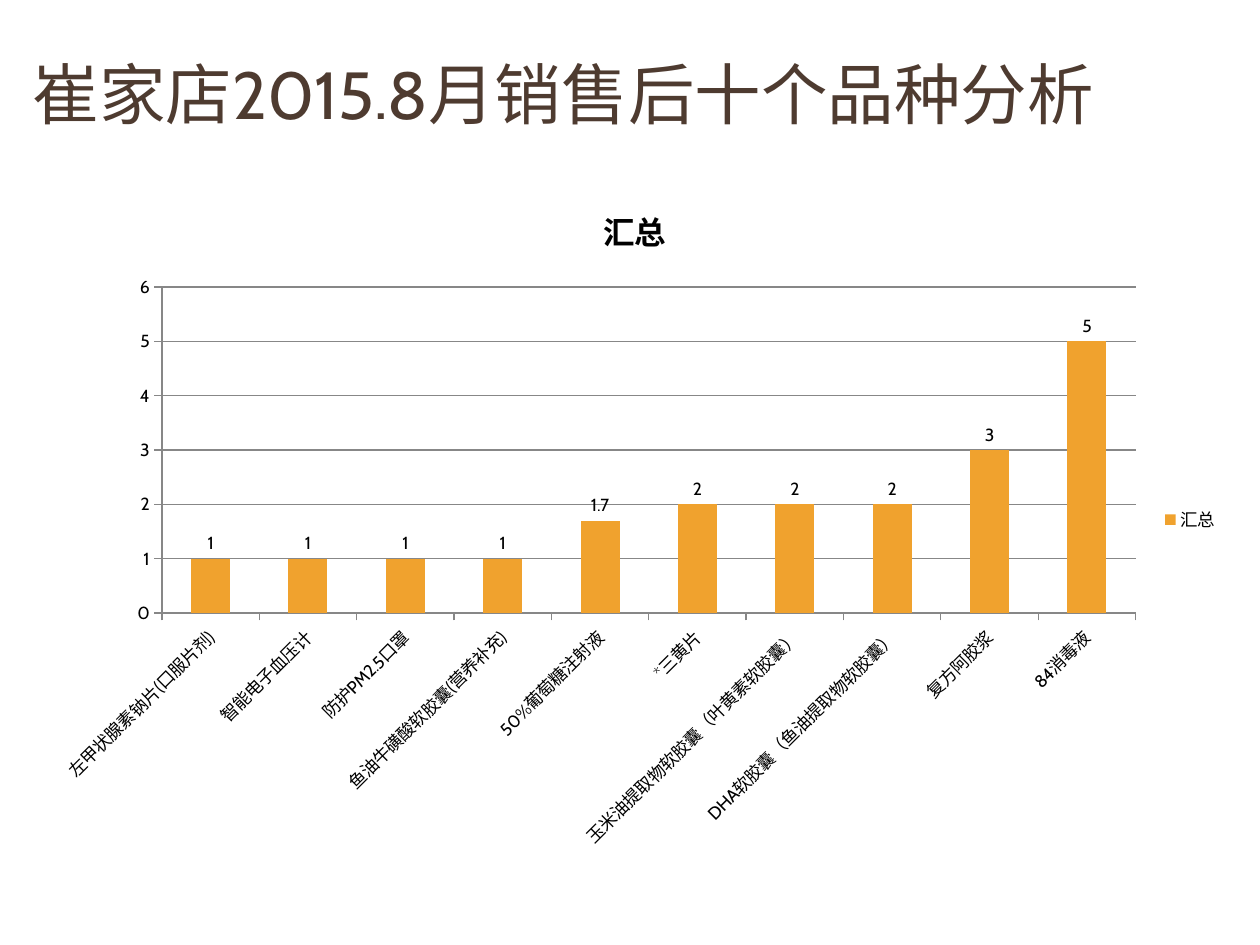
from pptx import Presentation
from pptx.chart.data import CategoryChartData
from pptx.dml.color import RGBColor
from pptx.enum.chart import XL_CHART_TYPE, XL_LABEL_POSITION, XL_LEGEND_POSITION, XL_TICK_MARK
from pptx.enum.text import MSO_ANCHOR
from pptx.util import Inches, Pt

COLUMNS = XL_CHART_TYPE.COLUMN_CLUSTERED
OUTSIDE_END = XL_LABEL_POSITION.OUTSIDE_END
LEGEND_RIGHT = XL_LEGEND_POSITION.RIGHT
TICK_OUTSIDE = XL_TICK_MARK.OUTSIDE
MIDDLE = MSO_ANCHOR.MIDDLE
FONT = "Cabin"
GREY = "878787"

SALES = {
    "左甲状腺素钠片(口服片剂)": 1,
    "智能电子血压计": 1,
    "防护PM2.5口罩": 1,
    "鱼油牛磺酸软胶囊(营养补充)": 1,
    "50%葡萄糖注射液": 1.7,
    "*三黄片": 2,
    "玉米油提取物软胶囊（叶黄素软胶囊）": 2,
    "DHA软胶囊（鱼油提取物软胶囊）": 2,
    "复方阿胶浆": 3,
    "84消毒液": 5,
}


def color(hex_string):
    return RGBColor.from_string(hex_string)


def style_font(font, size, hex_string, bold=False):
    font.name = FONT
    font.size = Pt(size)
    font.bold = bold
    font.color.rgb = color(hex_string)


presentation = Presentation()
presentation.slide_width = Inches(10)
presentation.slide_height = Inches(7.5)
slide = presentation.slides.add_slide(presentation.slide_layouts[6])

# Heading
heading = slide.shapes.add_textbox(Inches(0.16), Inches(0.31), Inches(9.61), Inches(0.86))
heading_frame = heading.text_frame
heading_frame.word_wrap = True
heading_frame.vertical_anchor = MIDDLE
paragraph = heading_frame.paragraphs[0]
paragraph.text = "崔家店2015.8月销售后十个品种分析"
style_font(paragraph.font, 38, "4E3B30")

# Sales chart
chart_data = CategoryChartData()
chart_data.categories = list(SALES)
chart_data.add_series("汇总", list(SALES.values()))
chart = slide.shapes.add_chart(
    COLUMNS, Inches(0.31), Inches(1.41), Inches(9.46), Inches(5.43), chart_data
).chart
style_font(chart.font, 10, "000000")

chart.has_title = True
title_paragraph = chart.chart_title.text_frame.paragraphs[0]
title_paragraph.text = "汇总"
style_font(title_paragraph.font, 18, "000000", bold=True)

chart.has_legend = True
chart.legend.position = LEGEND_RIGHT
chart.legend.include_in_layout = False

plot = chart.plots[0]
plot.vary_by_categories = False
plot.gap_width = 150
plot.has_data_labels = True
plot.data_labels.show_value = True
plot.data_labels.position = OUTSIDE_END
bar_fill = plot.series[0].format.fill
bar_fill.solid()
bar_fill.fore_color.rgb = color("F0A22E")

# Axes
value_axis = chart.value_axis
value_axis.minimum_scale = 0
value_axis.maximum_scale = 6
value_axis.major_unit = 1
value_axis.has_major_gridlines = True
for line in (
    value_axis.format.line,
    value_axis.major_gridlines.format.line,
    chart.category_axis.format.line,
):
    line.color.rgb = color(GREY)
    line.width = Pt(0.75)
for axis in (value_axis, chart.category_axis):
    axis.major_tick_mark = TICK_OUTSIDE
    style_font(axis.tick_labels.font, 10, "000000")

# Slant the product names by 45 degrees, in 60000ths of a degree
chart.category_axis._element.txPr.bodyPr.set("rot", str(-45 * 60000))

presentation.save("out.pptx")
